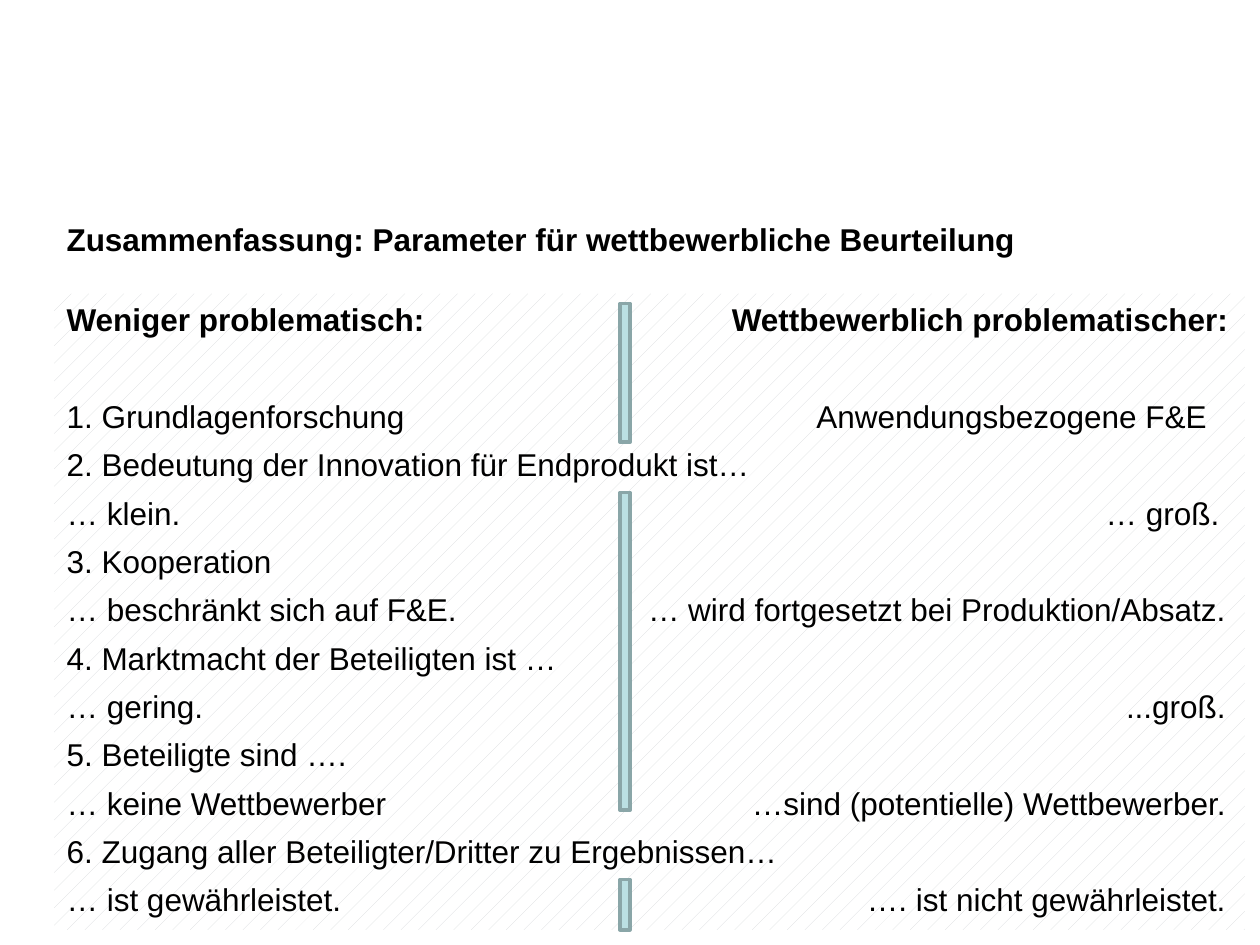
from dataclasses import dataclass

from lxml.etree import SubElement
from pptx import Presentation
from pptx.dml.color import RGBColor
from pptx.enum.dml import MSO_PATTERN
from pptx.enum.shapes import MSO_SHAPE
from pptx.enum.text import MSO_ANCHOR, PP_ALIGN
from pptx.oxml.ns import qn
from pptx.slide import Slide
from pptx.util import Inches, Pt

COLUMNS, ROWS = 100, 75
WIDTH, HEIGHT = Inches(10), Inches(7.5)
LEFT = 4.3
RIGHT_EDGE = 92
HEADING_GAP = 34

TITLE = "Zusammenfassung: Parameter für wettbewerbliche Beurteilung"
HEADINGS = ("Weniger problematisch:", "Wettbewerblich problematischer:", 92.2)
COMPARISON = [
    ("1. Grundlagenforschung", "Anwendungsbezogene F&E", 90.5),
    ("2. Bedeutung der Innovation für Endprodukt ist…",),
    ("… klein.", "… groß.", 91.5),
    ("3. Kooperation",),
    ("… beschränkt sich auf F&E.", "… wird fortgesetzt bei Produktion/Absatz."),
    ("4. Marktmacht der Beteiligten ist …",),
    ("… gering.", "...groß."),
    ("5. Beteiligte sind ….",),
    ("… keine Wettbewerber", "…sind (potentielle) Wettbewerber."),
    ("6. Zugang aller Beteiligter/Dritter zu Ergebnissen…",),
    ("… ist gewährleistet.", "…. ist nicht gewährleistet."),
]
DIVIDERS = [(24.1, 11), (39.1, 25.2), (69.8, 4)]


def color(value):
    return RGBColor.from_string(value)


@dataclass
class SlideBuilder:
    """Holds the style and the current slide, measured on a column and row grid."""

    slide: Slide
    font: str = "Arial"
    size: float = 18
    gap: float = 6
    ink: str = "000000"
    hatch: str = "D8DADC"
    paper: str = "FFFFFF"
    bar_fill: str = "BBE0E3"
    bar_line: str = "8AA6A8"

    def place(self, left, top, width, height):
        column, row = WIDTH / COLUMNS, HEIGHT / ROWS
        return [int(length) for length in (left * column, top * row, width * column, height * row)]

    def style(self, paragraph, bold=False, gap=None):
        paragraph.alignment = PP_ALIGN.LEFT
        paragraph.space_after = Pt(gap or self.gap)
        paragraph.font.name = self.font
        paragraph.font.size = Pt(self.size)
        paragraph.font.bold = bold
        paragraph.font.color.rgb = color(self.ink)

    def title(self, text, *box):
        frame = self.slide.shapes.add_textbox(*self.place(*box)).text_frame
        frame.word_wrap = True
        frame.text = text
        self.style(frame.paragraphs[0], bold=True)

    def rectangle(self, *box):
        shape = self.slide.shapes.add_shape(MSO_SHAPE.RECTANGLE, *self.place(*box))
        shape.shadow.inherit = False
        return shape

    def row(self, paragraph, left, right="", edge=RIGHT_EDGE, bold=False, gap=None):
        paragraph.text = f"{left}\t{right}" if right else left
        if right:
            tabs = SubElement(paragraph._p.get_or_add_pPr(), qn("a:tabLst"))
            SubElement(tabs, qn("a:tab"), pos=str(int(edge * WIDTH / COLUMNS)), algn="r")
        self.style(paragraph, bold, gap)

    def comparison(self, headings, rows, *box):
        panel = self.rectangle(*box)
        panel.line.fill.background()
        panel.fill.patterned()
        panel.fill.pattern = MSO_PATTERN.PERCENT_5
        panel.fill.fore_color.rgb = color(self.hatch)
        panel.fill.back_color.rgb = color(self.paper)
        frame = panel.text_frame
        frame.word_wrap = True
        frame.vertical_anchor = MSO_ANCHOR.TOP
        self.row(frame.paragraphs[0], *headings, bold=True, gap=HEADING_GAP)
        for entry in rows:
            self.row(frame.add_paragraph(), *entry)

    def divider(self, *box):
        bar = self.rectangle(*box)
        bar.fill.solid()
        bar.fill.fore_color.rgb = color(self.bar_fill)
        bar.line.color.rgb = color(self.bar_line)
        bar.line.width = Pt(2)


def main():
    presentation = Presentation()
    presentation.slide_width, presentation.slide_height = WIDTH, HEIGHT
    builder = SlideBuilder(presentation.slides.add_slide(presentation.slide_layouts[6]))
    builder.title(TITLE, LEFT, 17, 88.2, 4)
    builder.comparison(HEADINGS, COMPARISON, LEFT, 23.3, 94.5, 50.5)
    for top, height in DIVIDERS:
        builder.divider(49.2, top, 0.8, height)
    presentation.save("out.pptx")


if __name__ == "__main__":
    main()
